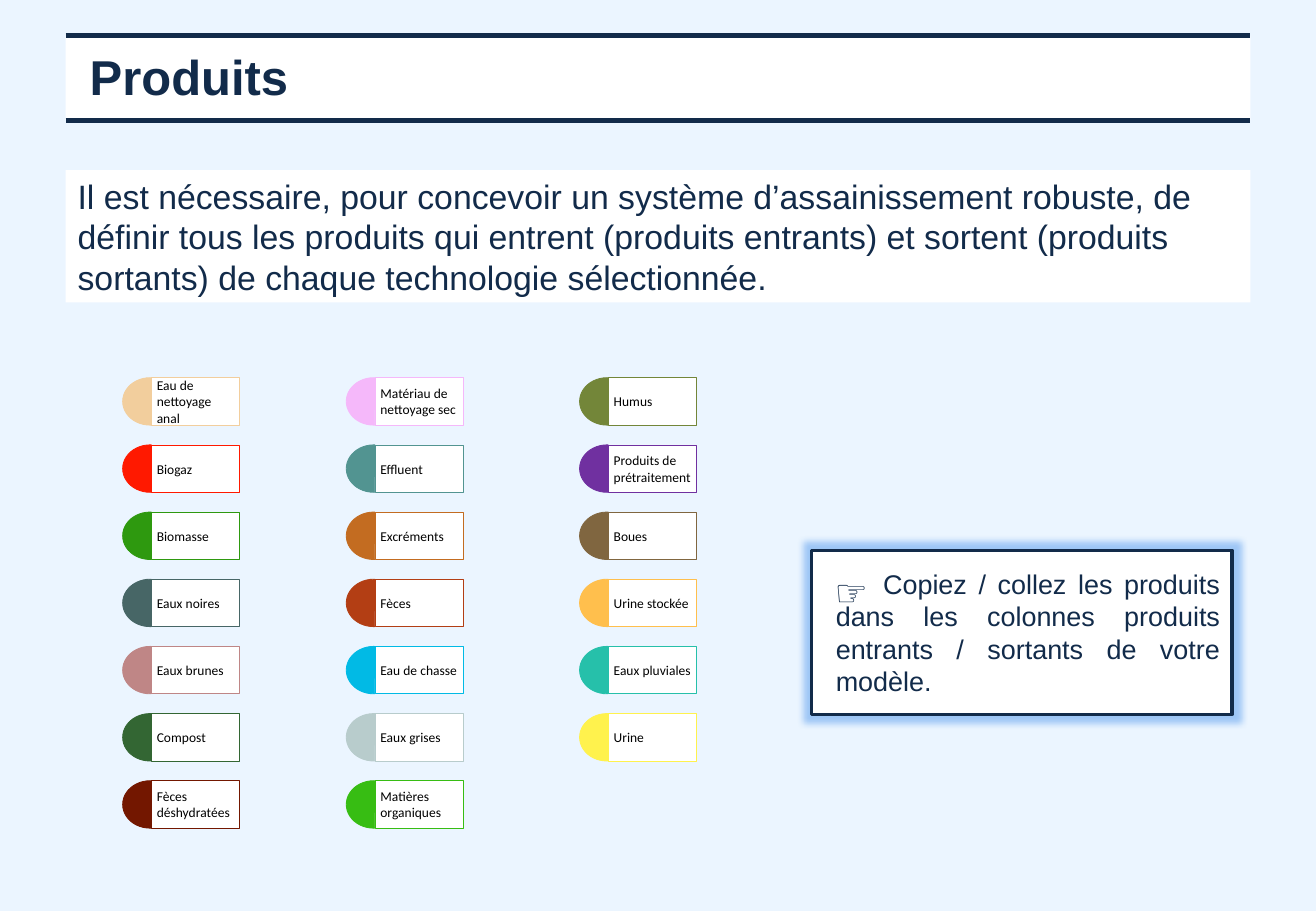
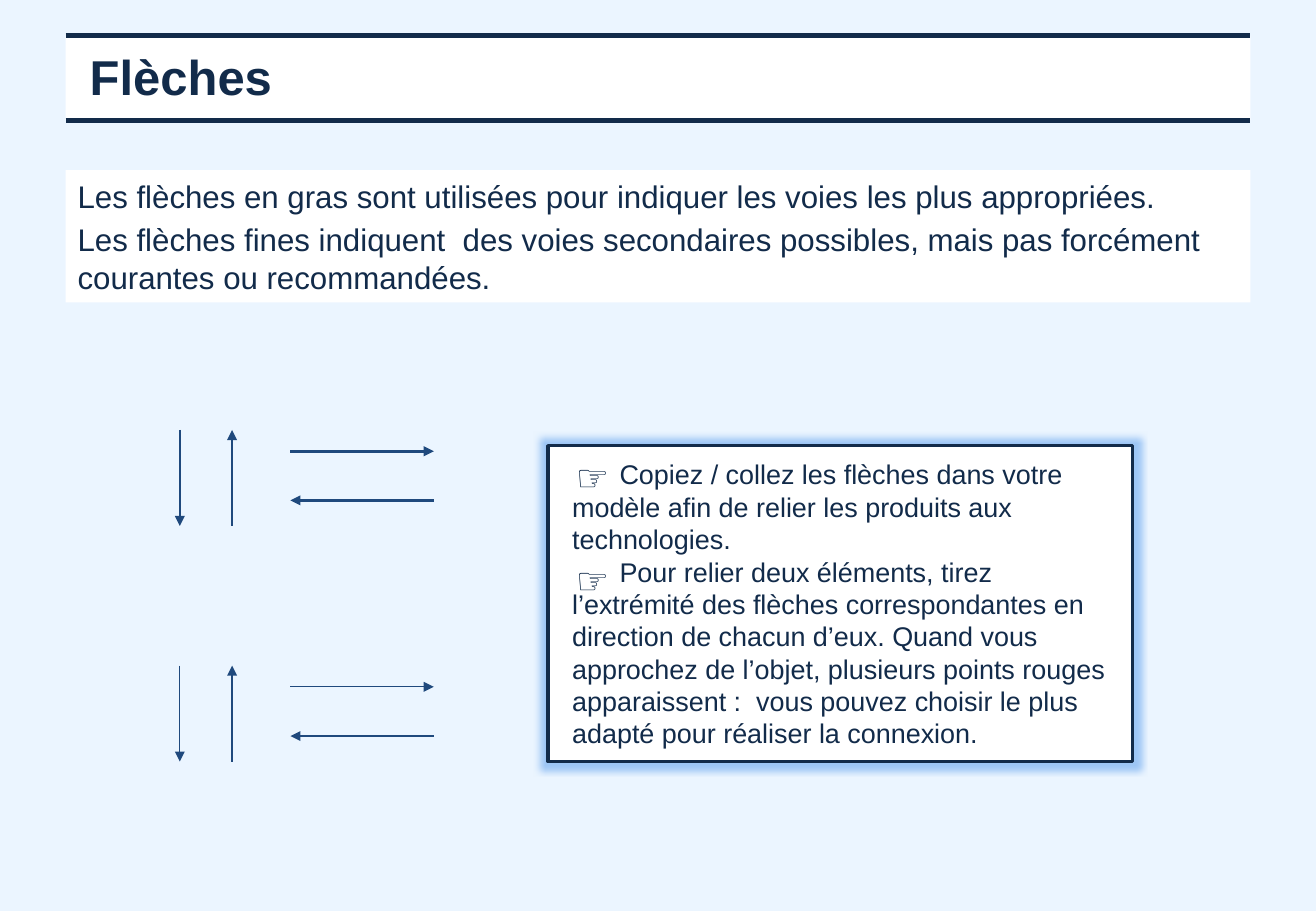
from lxml.etree import SubElement
from pptx import Presentation
from pptx.dml.color import RGBColor
from pptx.enum.shapes import MSO_CONNECTOR, MSO_SHAPE
from pptx.enum.text import MSO_ANCHOR, PP_ALIGN
from pptx.oxml.ns import qn
from pptx.util import Inches, Pt

COLOURS = {
    "background": "EBF5FF",
    "paper": "FFFFFF",
    "navy": "122B4A",
    "arrow": "1F497D",
    "glow": "2A80E8",
    "label": "000000",
}
GRID = 0.1
WIDTH, HEIGHT = 108.3, 75
MARGIN, CONTENT_WIDTH = 5.4, 97.5

PRODUCT_COLUMNS = {
    10.1: [
        ("Eau de nettoyage anal", "F2CE9D"),
        ("Biogaz", "FF1900"),
        ("Biomasse", "2E990F"),
        ("Eaux noires", "476666"),
        ("Eaux brunes", "BF8686"),
        ("Compost", "336633"),
        ("Fèces déshydratées", "731700"),
    ],
    28.5: [
        ("Matériau de nettoyage sec", "F5B8FA"),
        ("Effluent", "529491"),
        ("Excréments", "C36C21"),
        ("Fèces", "B33E14"),
        ("Eau de chasse", "01BAE5"),
        ("Eaux grises", "B8CCCC"),
        ("Matières organiques", "37BD13"),
    ],
    47.7: [
        ("Humus", "738639"),
        ("Produits de prétraitement", "7030A0"),
        ("Boues", "806640"),
        ("Urine stockée", "FFBF4D"),
        ("Eaux pluviales", "26C0AA"),
        ("Urine", "FFF24D"),
    ],
}
PRODUCT_TOP, PRODUCT_PITCH = 31.1, 5.53


def grid(*cells):
    """Convert grid columns or rows to slide lengths."""
    return [Inches(cell * GRID) for cell in cells]


def colour(name):
    """Look up a named colour, or read a hex string."""
    return RGBColor.from_string(COLOURS.get(name, name))


def apply_format(target, values):
    """Set every attribute in a dict of format values."""
    for name, value in values.items():
        setattr(target, name, value)


class Deck:
    """Holds the shared style and the slide being built."""

    def __init__(self):
        """Set the slide size and the shared background."""
        self.presentation = Presentation()
        size = grid(WIDTH, HEIGHT)
        apply_format(self.presentation, {"slide_width": size[0], "slide_height": size[1]})
        fill = self.presentation.slide_master.background.fill
        fill.solid()
        fill.fore_color.rgb = colour("background")
        self.slide = None

    def new_slide(self, title):
        """Start a slide with its title band between two rules."""
        self.slide = self.presentation.slides.add_slide(self.presentation.slide_layouts[6])
        band = self.box(MSO_SHAPE.RECTANGLE, (MARGIN, 3, CONTENT_WIDTH, 6.9))
        self.add_text(band, [title], {"size": Pt(29), "bold": True},
                      insets=(1, 0, 1, 0.4), indent=(1, 0))
        for row in (2.9, 9.9):
            self.line((MARGIN, row), (MARGIN + CONTENT_WIDTH, row), "navy", 3)

    def box(self, kind, place, fill="paper", line=None, width=0.5, parent=None):
        """Draw a filled shape, with an outline if one is named."""
        shape = (parent or self.slide).shapes.add_shape(kind, *grid(*place))
        shape.shadow.inherit = False
        shape.fill.solid()
        shape.fill.fore_color.rgb = colour(fill)
        if line:
            shape.line.color.rgb = colour(line)
            shape.line.width = Pt(width)
        else:
            shape.line.fill.background()
        return shape

    def add_text(self, shape, texts, font, ink="navy", insets=(1, 0.5, 1, 0.5),
                 indent=None, paragraph_format=None, frame_format=None):
        """Put paragraphs of one style into a shape."""
        frame = shape.text_frame
        sides = ("margin_left", "margin_top", "margin_right", "margin_bottom")
        apply_format(frame, {"word_wrap": True, "vertical_anchor": MSO_ANCHOR.MIDDLE,
                             **dict(zip(sides, grid(*insets))), **(frame_format or {})})
        for index, text in enumerate(texts):
            paragraph = frame.add_paragraph() if index else frame.paragraphs[0]
            apply_format(paragraph, {"alignment": PP_ALIGN.LEFT, **(paragraph_format or {})})
            if indent:
                properties = paragraph._p.get_or_add_pPr()
                for name, length in zip(("marL", "indent"), grid(*indent)):
                    properties.set(name, str(length))
            run = paragraph.add_run()
            run.text = text
            apply_format(run.font, {"name": "Arial", **font})
            run.font.color.rgb = colour(ink)

    def line(self, start, end, ink, width, arrow=False):
        """Draw a straight line, with an arrowhead if asked."""
        connector = self.slide.shapes.add_connector(
            MSO_CONNECTOR.STRAIGHT, *grid(*start, *end))
        connector.line.color.rgb = colour(ink)
        connector.line.width = Pt(width)
        if arrow:
            SubElement(connector.line._get_or_add_ln(), qn("a:tailEnd"), type="triangle")
        SubElement(connector._element.spPr, qn("a:effectLst"))

    def intro(self, texts, size):
        """Set the introduction on its white band."""
        band = self.box(MSO_SHAPE.RECTANGLE, (MARGIN, 14, CONTENT_WIDTH, 10.9))
        self.add_text(band, texts, {"size": Pt(size)},
                      paragraph_format={"space_before": Pt(size * 0.2)})

    def product(self, left, top, name, tint):
        """Draw a product label with a rounded coloured end."""
        group = self.slide.shapes.add_group_shape()
        label = self.box(MSO_SHAPE.RECTANGLE, (left + 2.4, top, 7.2, 3.9),
                         line=tint, parent=group)
        self.add_text(label, [name], {"name": "Calibri", "size": Pt(8)}, "label",
                      insets=(0.4, 0.5, 0.4, 0.5))
        end = self.box(MSO_SHAPE.CHORD, (left, top, 4.5, 3.9), tint, tint, parent=group)
        end.adjustments[0], end.adjustments[1] = 52.44, 163.87

    def callout(self, place, texts, hands, alignment=PP_ALIGN.LEFT):
        """Draw a glowing instruction box with pointing hands."""
        shape = self.box(MSO_SHAPE.FLOWCHART_PROCESS, place, line="navy", width=2)
        effects = shape._element.spPr.find(qn("a:effectLst"))
        glow = SubElement(effects, qn("a:glow"), rad=str(Pt(8)))
        tint = SubElement(glow, qn("a:srgbClr"), val=COLOURS["glow"])
        SubElement(tint, qn("a:alpha"), val="40000")
        self.add_text(shape, texts, {"size": Pt(16)}, indent=(1, 3.9),
                      paragraph_format={"alignment": alignment})
        for left, top in hands:
            hand = self.slide.shapes.add_textbox(*grid(left, top, 4.9, 4.5))
            self.add_text(hand, ["☞"], {"size": Pt(22), "bold": True},
                          frame_format={"word_wrap": False,
                                        "vertical_anchor": MSO_ANCHOR.TOP})

    def arrow_set(self, top, width):
        """Draw four arrows: down, up, right and left."""
        bottom = top + 7.9
        right_row, left_row = top + 1.75, top + 5.8
        for start, end in (
            ((14.8, top), (14.8, bottom)),
            ((19.1, bottom), (19.1, top)),
            ((23.9, right_row), (35.7, right_row)),
            ((35.7, left_row), (23.9, left_row)),
        ):
            self.line(start, end, "arrow", width, arrow=True)


def main():
    """Build both slides and save them."""
    deck = Deck()

    deck.new_slide("Produits")
    deck.intro(["Il est nécessaire, pour concevoir un système d’assainissement robuste, "
                "de définir tous les produits qui entrent (produits entrants) et sortent "
                "(produits sortants) de chaque technologie sélectionnée."], 20)
    for left, products in PRODUCT_COLUMNS.items():
        for row, (name, tint) in enumerate(products):
            deck.product(left, PRODUCT_TOP + row * PRODUCT_PITCH, name, tint)
    deck.callout((66.8, 45.3, 34.6, 13.5),
                 ["Copiez / collez les produits dans les colonnes produits "
                  "entrants / sortants de votre modèle."],
                 [(67.7, 46.4)], PP_ALIGN.JUSTIFY)

    deck.new_slide("Flèches")
    deck.intro(["Les flèches en gras sont utilisées pour indiquer les voies les plus "
                "appropriées.",
                "Les flèches fines indiquent  des voies secondaires possibles, mais pas "
                "forcément courantes ou recommandées."], 18.5)
    for top, width in ((35.4, 1.5), (54.8, 0.75)):
        deck.arrow_set(top, width)
    deck.callout((45.1, 36.7, 48.1, 26),
                 ["Copiez / collez les flèches dans votre modèle afin de relier les "
                  "produits aux technologies.",
                  "Pour relier deux éléments, tirez l’extrémité des flèches "
                  "correspondantes en direction de chacun d’eux. Quand vous approchez de "
                  "l’objet, plusieurs points rouges apparaissent :  vous pouvez choisir "
                  "le plus adapté pour réaliser la connexion."],
                 [(46.4, 36.9), (46.4, 45.4)])

    deck.presentation.save("out.pptx")


if __name__ == "__main__":
    main()
